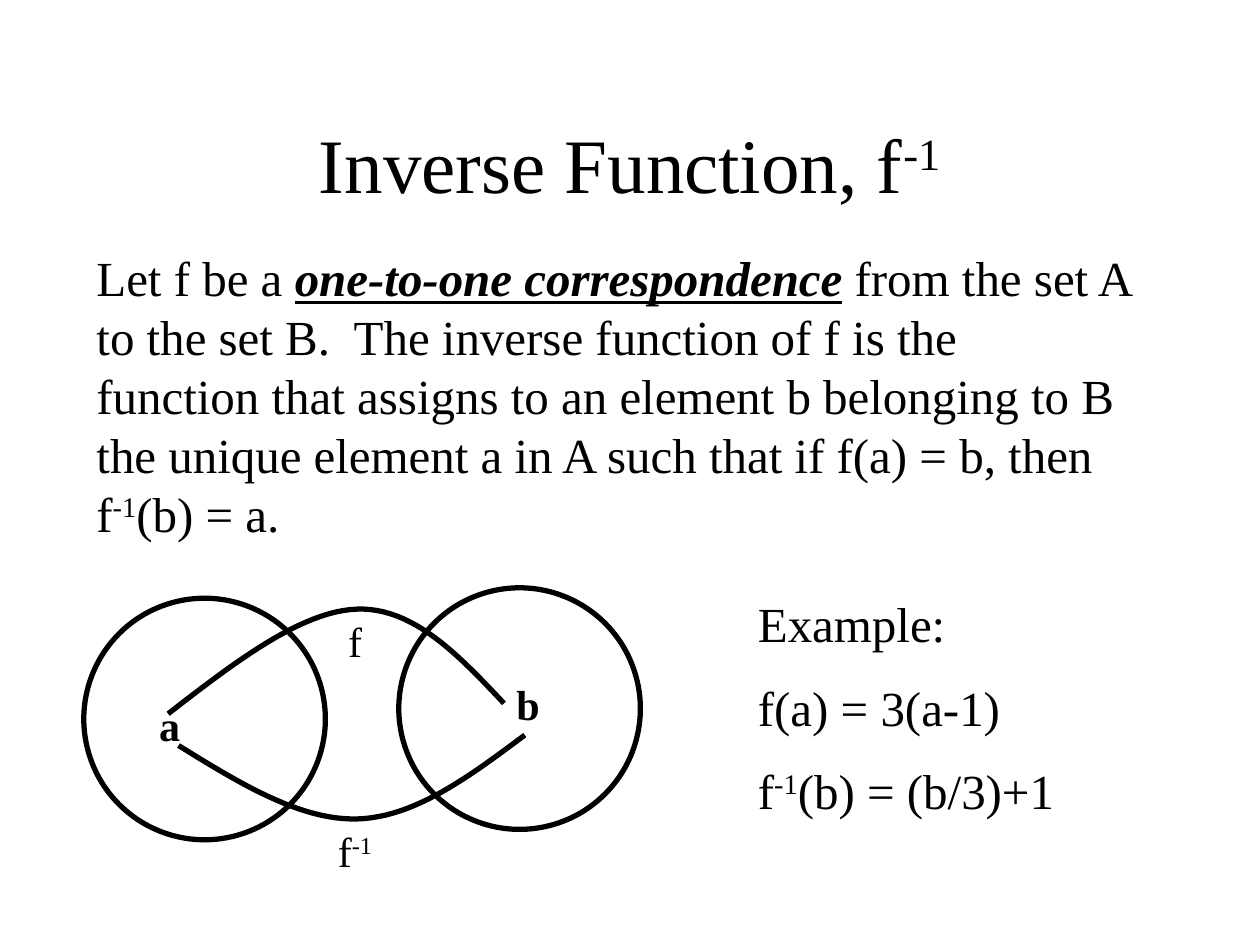
from dataclasses import dataclass, field

from pptx import Presentation
from pptx import util as u
from pptx.dml.color import RGBColor
from pptx.enum import shapes, text


@dataclass(frozen=True)
class Theme:
    font: str = "Times New Roman"
    ink: RGBColor = RGBColor(0, 0, 0)
    title: int = 44
    body: int = 28
    label: int = 24
    paragraph_gap: int = 14
    outline: int = 3
    superscript: int = 30000


@dataclass(frozen=True)
class Box:
    """Position and size in centimetres."""
    left: float
    top: float
    width: float
    height: float

    def emu(self) -> list[int]:
        return [u.Cm(v) for v in (self.left, self.top, self.width, self.height)]


@dataclass(frozen=True)
class Span:
    words: str
    raised: bool = False
    style: dict = field(default_factory=dict)


@dataclass(frozen=True)
class Label:
    spans: list[Span]
    box: Box
    bold: bool = False


Point = tuple[float, float]
THEME = Theme()
CIRCLE = 4.87
CURVE_STEPS = 24

INVERSE = [Span("f"), Span("-1", raised=True)]
TITLE = [Span("Inverse Function, f"), Span("-1", raised=True)]
DEFINITION = [
    Span("Let f be a "),
    Span("one-to-one correspondence",
         style={"bold": True, "italic": True, "underline": True}),
    Span(" from the set A to the set B.  The inverse function of f is the "
         "function that assigns to an element b belonging to B the unique "
         "element a in A such that if f(a) = b, then  f"),
    Span("-1", raised=True),
    Span("(b) = a."),
]
EXAMPLE = [
    [Span("Example:")],
    [Span("f(a) = 3(a-1)")],
    [*INVERSE, Span("(b) = (b/3)+1")],
]
SETS = [Box(1.69, 12.06, CIRCLE, CIRCLE), Box(8.04, 11.85, CIRCLE, CIRCLE)]
LABELS = [
    Label([Span("a")], Box(2.96, 13.97, 2.33, 1.27), bold=True),
    Label([Span("b")], Box(10.16, 13.55, 2.54, 1.27), bold=True),
    Label([Span("f")], Box(6.77, 12.28, 1.27, 1.27)),
    Label(INVERSE, Box(6.56, 16.51, 1.9, 1.27)),
]
# Each mapping is a chain of cubic Bézier segments sharing their end points.
MAPPINGS: list[list[Point]] = [
    [(3.39, 14.39), (4.72, 13.36), (6.07, 12.32), (7.2, 12.28),
     (8.33, 12.24), (9.25, 13.21), (10.16, 14.18)],
    [(10.58, 14.82), (9.47, 15.65), (8.36, 16.48), (7.2, 16.51),
     (6.05, 16.54), (4.83, 15.79), (3.6, 15.03)],
]


def write(paragraph, spans: list[Span], size: int, bold: bool = False) -> None:
    for span in spans:
        run = paragraph.add_run()
        run.text = span.words
        formats = {"name": THEME.font, "size": u.Pt(size), "bold": bold, **span.style}
        for key, value in formats.items():
            setattr(run.font, key, value)
        run.font.color.rgb = THEME.ink
        if span.raised:
            run._r.get_or_add_rPr().set("baseline", str(THEME.superscript))


def fill_frame(shape, paragraphs: list[list[Span]], size: int, bold: bool = False,
               anchor=text.MSO_ANCHOR.TOP, align=text.PP_ALIGN.LEFT) -> None:
    frame = shape.text_frame
    formats = {"word_wrap": True, "auto_size": text.MSO_AUTO_SIZE.NONE,
               "vertical_anchor": anchor}
    for key, value in formats.items():
        setattr(frame, key, value)
    for index, spans in enumerate(paragraphs):
        paragraph = frame.add_paragraph() if index else frame.paragraphs[0]
        paragraph.alignment = align
        paragraph.space_before = u.Pt(THEME.paragraph_gap if index else 0)
        write(paragraph, spans, size, bold)


def place(placeholder, box: Box) -> None:
    for key, value in zip(("left", "top", "width", "height"), box.emu()):
        setattr(placeholder, key, value)


def remove_bullet(paragraph) -> None:
    properties = paragraph._p.get_or_add_pPr()
    for key in ("marL", "indent"):
        properties.set(key, "0")
    properties.append(properties.makeelement(
        "{http://schemas.openxmlformats.org/drawingml/2006/main}buNone", {}))


def outline_only(shape) -> None:
    shape.shadow.inherit = False
    shape.fill.background()
    shape.line.color.rgb = THEME.ink
    shape.line.width = u.Pt(THEME.outline)


def bezier_points(controls: list[Point]) -> list[Point]:
    """Sample the chain of cubic segments, leaving out its first point."""
    points = []
    for first in range(0, len(controls) - 1, 3):
        segment = controls[first:first + 4]
        for step in range(1, CURVE_STEPS + 1):
            t = step / CURVE_STEPS
            weights = ((1 - t) ** 3, 3 * t * (1 - t) ** 2, 3 * t * t * (1 - t), t ** 3)
            x, y = (sum(w * p[axis] for w, p in zip(weights, segment))
                    for axis in (0, 1))
            points.append((u.Cm(x), u.Cm(y)))
    return points


def draw_mapping(canvas, controls: list[Point]) -> None:
    x, y = controls[0]
    builder = canvas.build_freeform(u.Cm(x), u.Cm(y))
    builder.add_line_segments(bezier_points(controls), close=False)
    outline_only(builder.convert_to_shape())


def draw_diagram(canvas) -> None:
    for box in SETS:
        outline_only(canvas.add_shape(shapes.MSO_SHAPE.OVAL, *box.emu()))
    for controls in MAPPINGS:
        draw_mapping(canvas, controls)
    for label in LABELS:
        fill_frame(canvas.add_textbox(*label.box.emu()), [label.spans],
                   THEME.label, label.bold)


def main() -> None:
    deck = Presentation()
    deck.slide_width, deck.slide_height = u.Cm(25.4), u.Cm(19.05)
    slide = deck.slides.add_slide(deck.slide_layouts[1])

    title = slide.shapes.title
    place(title, Box(1.9, 1.69, 21.59, 3.18))
    fill_frame(title, [TITLE], THEME.title, anchor=text.MSO_ANCHOR.MIDDLE,
               align=text.PP_ALIGN.CENTER)

    definition = slide.placeholders[1]
    place(definition, Box(1.69, 4.87, 21.38, 6.2))
    fill_frame(definition, [DEFINITION], THEME.body)
    remove_bullet(definition.text_frame.paragraphs[0])

    draw_diagram(slide.shapes.add_group_shape().shapes)

    example = slide.shapes.add_textbox(*Box(15.03, 11.85, 9.53, 5).emu())
    fill_frame(example, EXAMPLE, THEME.body)
    deck.save("out.pptx")


if __name__ == "__main__":
    main()
